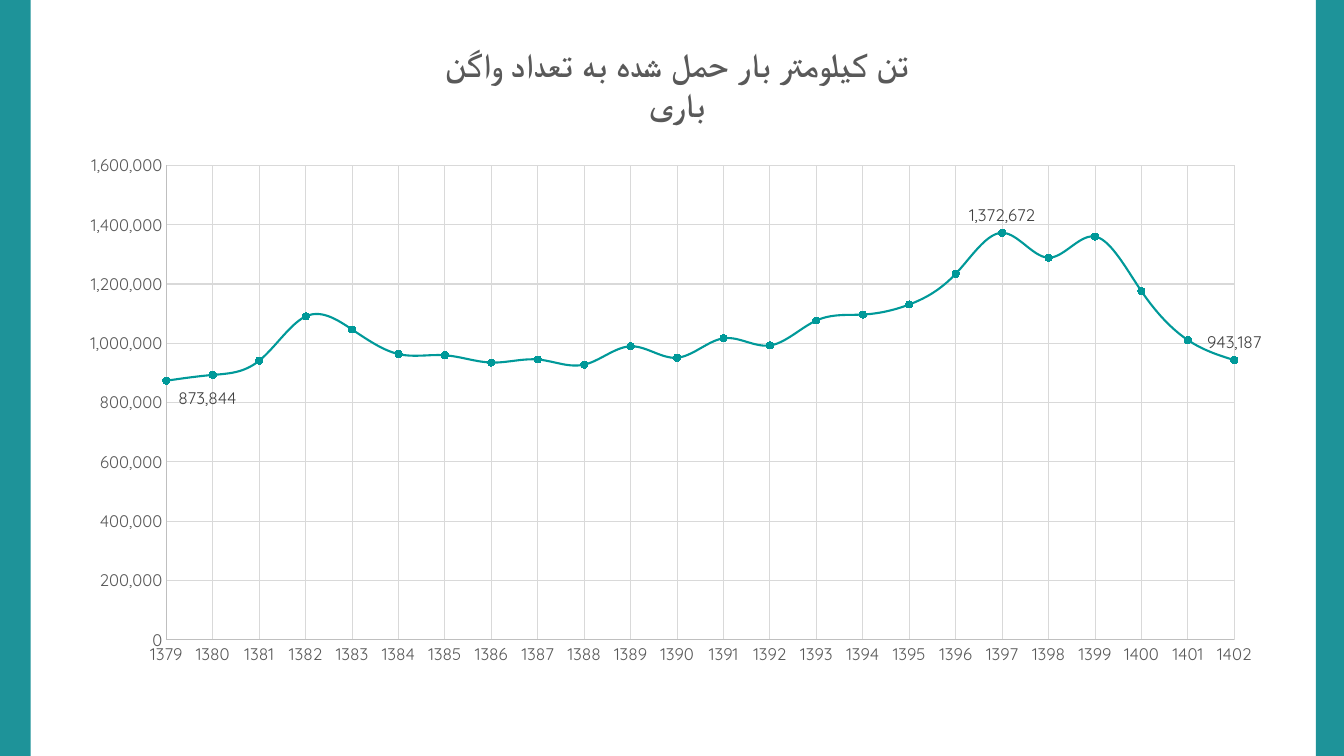
from lxml import etree
from pptx import Presentation
from pptx.chart.data import XyChartData
from pptx.dml.color import RGBColor
from pptx.enum.chart import XL_CHART_TYPE, XL_LABEL_POSITION, XL_MARKER_STYLE, XL_TICK_MARK
from pptx.enum.shapes import MSO_SHAPE
from pptx.enum.text import MSO_ANCHOR, MSO_AUTO_SIZE, PP_ALIGN
from pptx.oxml.ns import qn
from pptx.util import Pt

RECT = MSO_SHAPE.RECTANGLE
SMOOTH = XL_CHART_TYPE.XY_SCATTER_SMOOTH
ABOVE = XL_LABEL_POSITION.ABOVE
BELOW = XL_LABEL_POSITION.BELOW
CIRCLE = XL_MARKER_STYLE.CIRCLE
NO_TICK = XL_TICK_MARK.NONE
TOP = MSO_ANCHOR.TOP
GROW = MSO_AUTO_SIZE.SHAPE_TO_FIT_TEXT
CENTER = PP_ALIGN.CENTER

SIDE = RGBColor(0x1E, 0x93, 0x99)
TEAL = RGBColor(0x00, 0x99, 0x99)
GRAY = RGBColor(0x59, 0x59, 0x59)
DARK = RGBColor(0x40, 0x40, 0x40)
RULE = RGBColor(0xBF, 0xBF, 0xBF)
GRID = RGBColor(0xD9, 0xD9, 0xD9)
FACE = "Quicksand"

START = 1379
LOADS = [
    873844, 893379, 941407, 1090579, 1046567, 963674, 959637, 935099,
    945396, 928098, 989927, 951363, 1016824, 992820, 1076866, 1096961,
    1130931, 1234376, 1372672, 1288778, 1359968, 1175630, 1010827, 943187,
]


def style(font, size, color):
    font.name = FACE
    font.size = Pt(size)
    font.color.rgb = color


def place(parent, **parts):
    layout = parent.find(qn("c:layout"))
    if layout is None:
        layout = etree.Element(qn("c:layout"))
        parent.insert(1 if parent.tag == qn("c:dLbl") else 0, layout)
    manual = etree.SubElement(layout, qn("c:manualLayout"))
    for name, value in parts.items():
        etree.SubElement(manual, qn("c:" + name)).set("val", str(value))


deck = Presentation()
deck.slide_width = Pt(960)
deck.slide_height = Pt(540)
slide = deck.slides.add_slide(deck.slide_layouts[5])

for left, width in ((0, 22), (940, 20)):
    bar = slide.shapes.add_shape(RECT, Pt(left), Pt(0), Pt(width), Pt(540))
    bar.shadow.inherit = False
    bar.fill.solid()
    bar.fill.fore_color.rgb = SIDE
    bar.line.fill.background()

data = XyChartData(number_format="#,##0")
loads = data.add_series("Series 1")
for year, load in enumerate(LOADS, START):
    loads.add_data_point(year, load)

frame = slide.shapes.add_chart(SMOOTH, Pt(48), Pt(103), Pt(864), Pt(379.5), data)
chart = frame.chart
chart.has_title = False
chart.has_legend = False
style(chart.font, 12, GRAY)
plot = chart.plots[0]
plot.vary_by_categories = False
area = chart._chartSpace.chart.plotArea
place(area, layoutTarget="inner", xMode="edge", yMode="edge",
      x=0.082, y=0.04, w=0.883, h=0.893)

years, tons = chart.category_axis, chart.value_axis
for axis, low, high, step, code in (
    (years, START, START + len(LOADS) - 1, 1, "0"),
    (tons, 0, 1600000, 200000, "#,##0"),
):
    axis.minimum_scale = low
    axis.maximum_scale = high
    axis.major_unit = step
    axis.major_tick_mark = NO_TICK
    axis.minor_tick_mark = NO_TICK
    axis.has_major_gridlines = True
    axis.tick_labels.number_format = code
    axis.tick_labels.number_format_is_linked = False
    style(axis.tick_labels.font, 12, GRAY)
    for line, color in ((axis.format.line, RULE), (axis.major_gridlines.format.line, GRID)):
        line.color.rgb = color
        line.width = Pt(0.75)

curve = plot.series[0]
curve.format.line.color.rgb = TEAL
curve.format.line.width = Pt(1.5)
curve.marker.style = CIRCLE
curve.marker.size = 5
curve.marker.format.fill.solid()
curve.marker.format.fill.fore_color.rgb = TEAL
curve.marker.format.line.color.rgb = TEAL
curve._element.find(qn("c:smooth")).set("val", "1")

for index, spot in ((0, BELOW), (18, ABOVE), (23, ABOVE)):
    label = curve.points[index].data_label
    style(label.font, 12, DARK)
    label.position = spot

labels = curve._element.find(qn("c:dLbls"))
labels.find(qn("c:showVal")).set("val", "0")
place(labels.find(qn("c:dLbl")), x=0.034, y=0)

title = slide.shapes.title
title.left, title.top, title.width, title.height = Pt(289.5), Pt(27.5), Pt(388), Pt(65)
text = title.text_frame
text.word_wrap = True
text.auto_size = GROW
text.vertical_anchor = TOP
para = text.paragraphs[0]
para.alignment = CENTER
para._p.get_or_add_pPr().set("rtl", "1")
run = para.add_run()
run.text = "تن کیلومتر بار حمل شده به تعداد واگن باری"
style(run.font, 24, GRAY)
run.font.bold = True

deck.save("out.pptx")
